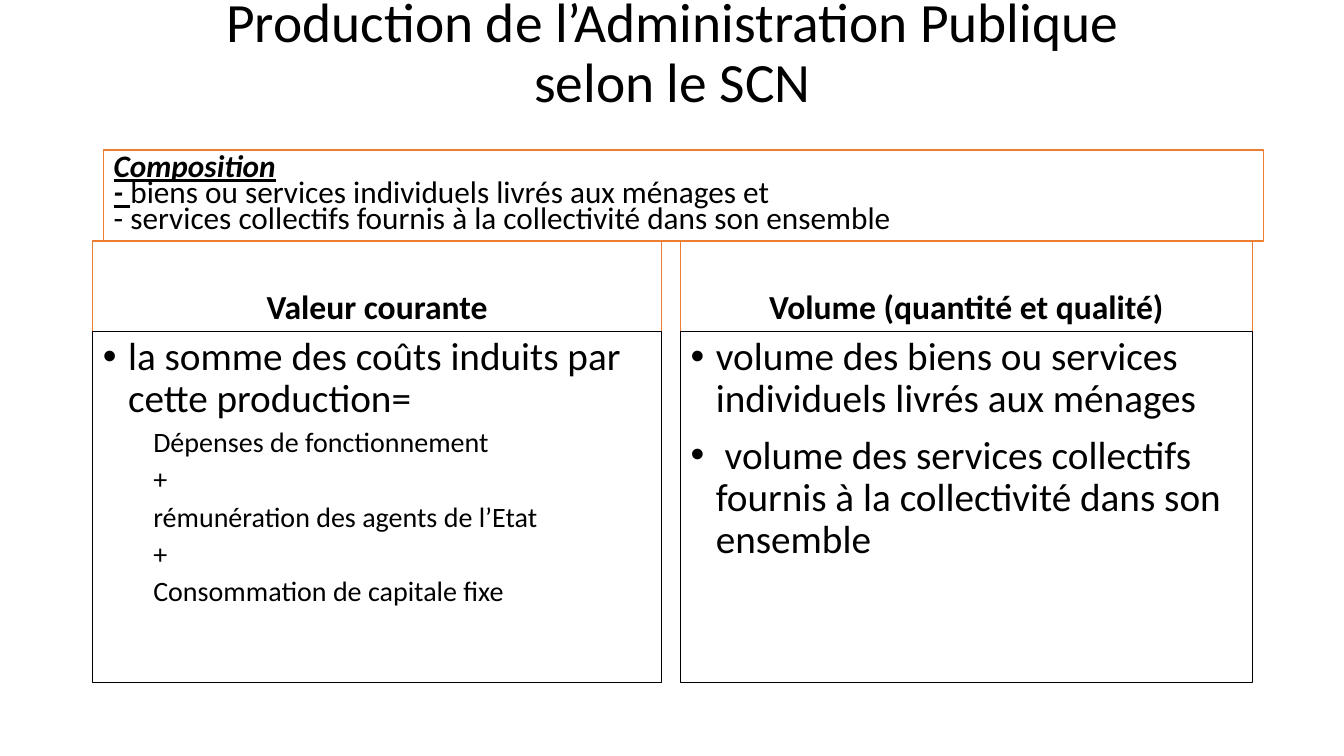
from dataclasses import dataclass

from lxml import etree
from pptx import Presentation
from pptx.dml.color import RGBColor
from pptx.enum.shapes import MSO_SHAPE
from pptx.enum.text import MSO_ANCHOR, MSO_AUTO_SIZE, PP_ALIGN
from pptx.oxml.ns import qn
from pptx.util import Inches, Pt

RECTANGLE = MSO_SHAPE.RECTANGLE
TOP, MIDDLE, BOTTOM = MSO_ANCHOR.TOP, MSO_ANCHOR.MIDDLE, MSO_ANCHOR.BOTTOM
LEFT, CENTER = PP_ALIGN.LEFT, PP_ALIGN.CENTER
NO_FIT = MSO_AUTO_SIZE.NONE

TITLE = "Production de l’Administration Publique\vselon le SCN"
COMPOSITION = [
    ("Composition\v", True, True),
    ("- ", True, False),
    ("biens ou services individuels livrés aux ménages et\v"
     "- services collectifs fournis à la collectivité dans son ensemble", False, False),
]
COLUMNS = [
    ("Valeur courante", [
        (0, "la somme des coûts induits par cette production="),
        (1, "Dépenses de fonctionnement"),
        (1, "+"),
        (1, "rémunération des agents de l’Etat"),
        (1, "+"),
        (1, "Consommation de capitale fixe"),
    ]),
    ("Volume (quantité et qualité)", [
        (0, "volume des biens ou services individuels livrés aux ménages"),
        (0, " volume des services collectifs fournis à la collectivité dans son ensemble"),
    ]),
]


@dataclass(frozen=True)
class Theme:
    font: str = "Calibri"
    text: RGBColor = RGBColor(0x00, 0x00, 0x00)
    fill: RGBColor = RGBColor(0xFF, 0xFF, 0xFF)
    accent: RGBColor = RGBColor(0xED, 0x7D, 0x31)
    title: float = 39.6
    composition: float = 22.3
    heading: float = 24
    levels: tuple = (28, 20)


THEME = Theme()
COLUMN_SPANS = [(0.92, 5.64), (6.75, 5.67)]
BAND_TOP, BAND_H, BODY_H = 1.49, 0.9, 3.48
HEAD_TOP = BAND_TOP + BAND_H
BODY_TOP = HEAD_TOP + BAND_H


def place(sp, left, top, width, height, anchor):
    sp.left, sp.top, sp.width, sp.height = map(Inches, (left, top, width, height))
    tf = sp.text_frame
    tf.word_wrap = True
    tf.auto_size = NO_FIT
    tf.vertical_anchor = anchor
    return tf


def frame(sp, color):
    sp.fill.solid()
    sp.fill.fore_color.rgb = THEME.fill
    sp.line.color.rgb = color
    sp.line.width = Pt(1)


def style_run(r, size, bold=False, accented=False):
    r.font.name = THEME.font
    r.font.size = Pt(size)
    r.font.color.rgb = THEME.text
    r.font.bold = bold
    r.font.italic = r.font.underline = accented


def style_paragraph(p, size, align=LEFT, spacing=0.9, before=0, bold=False):
    p.alignment = align
    p.line_spacing = spacing
    p.space_before = Pt(before)
    for r in p.runs:
        style_run(r, size, bold)


def set_bullet(p, level):
    pPr = p._p.get_or_add_pPr()
    pPr.set("marL", str(Inches(0.25 * (level + 1))))
    pPr.set("indent", str(0 if level else Inches(-0.25)))
    if level:
        etree.SubElement(pPr, qn("a:buNone"))
    else:
        etree.SubElement(pPr, qn("a:buFont"), typeface="Arial")
        etree.SubElement(pPr, qn("a:buChar"), char="•")


def add_title(s):
    tf = place(s.shapes.title, 0.92, 0.4, 11.5, 0.7, MIDDLE)
    tf.margin_bottom = Inches(0.46)
    tf.text = TITLE
    style_paragraph(tf.paragraphs[0], THEME.title, CENTER)


def add_column(head, body, left, width, heading, items):
    tf = place(head, left, HEAD_TOP, width, BAND_H, BOTTOM)
    frame(head, THEME.accent)
    tf.text = heading
    style_paragraph(tf.paragraphs[0], THEME.heading, CENTER, before=10, bold=True)

    tf = place(body, left, BODY_TOP, width, BODY_H, TOP)
    frame(body, THEME.text)
    tf.text = "\n".join(text for _, text in items)
    for p, (level, _) in zip(tf.paragraphs, items):
        p.level = level
        style_paragraph(p, THEME.levels[level], before=5 if level else 10)
        set_bullet(p, level)


def add_composition(s):
    sp = s.shapes.add_shape(RECTANGLE, 0, 0, 0, 0)
    sp.shadow.inherit = False
    frame(sp, THEME.accent)
    tf = place(sp, 1.03, BAND_TOP, 11.5, BAND_H, MIDDLE)
    p = tf.paragraphs[0]
    style_paragraph(p, THEME.composition, spacing=0.7)
    for text, bold, accented in COMPOSITION:
        for i, line in enumerate(text.split("\v")):
            if i:
                p.add_line_break()
            if line:
                r = p.add_run()
                r.text = line
                style_run(r, THEME.composition, bold, accented or (bold and line == "- "))
                r.font.underline = bold


def main():
    prs = Presentation()
    prs.slide_width, prs.slide_height = Inches(13.33), Inches(7.5)
    s = prs.slides.add_slide(prs.slide_layouts[4])
    add_title(s)
    for i, ((left, width), (heading, items)) in enumerate(zip(COLUMN_SPANS, COLUMNS)):
        head, body = (s.placeholders[2 * i + n] for n in (1, 2))
        add_column(head, body, left, width, heading, items)
    add_composition(s)
    prs.save("out.pptx")


if __name__ == "__main__":
    main()
